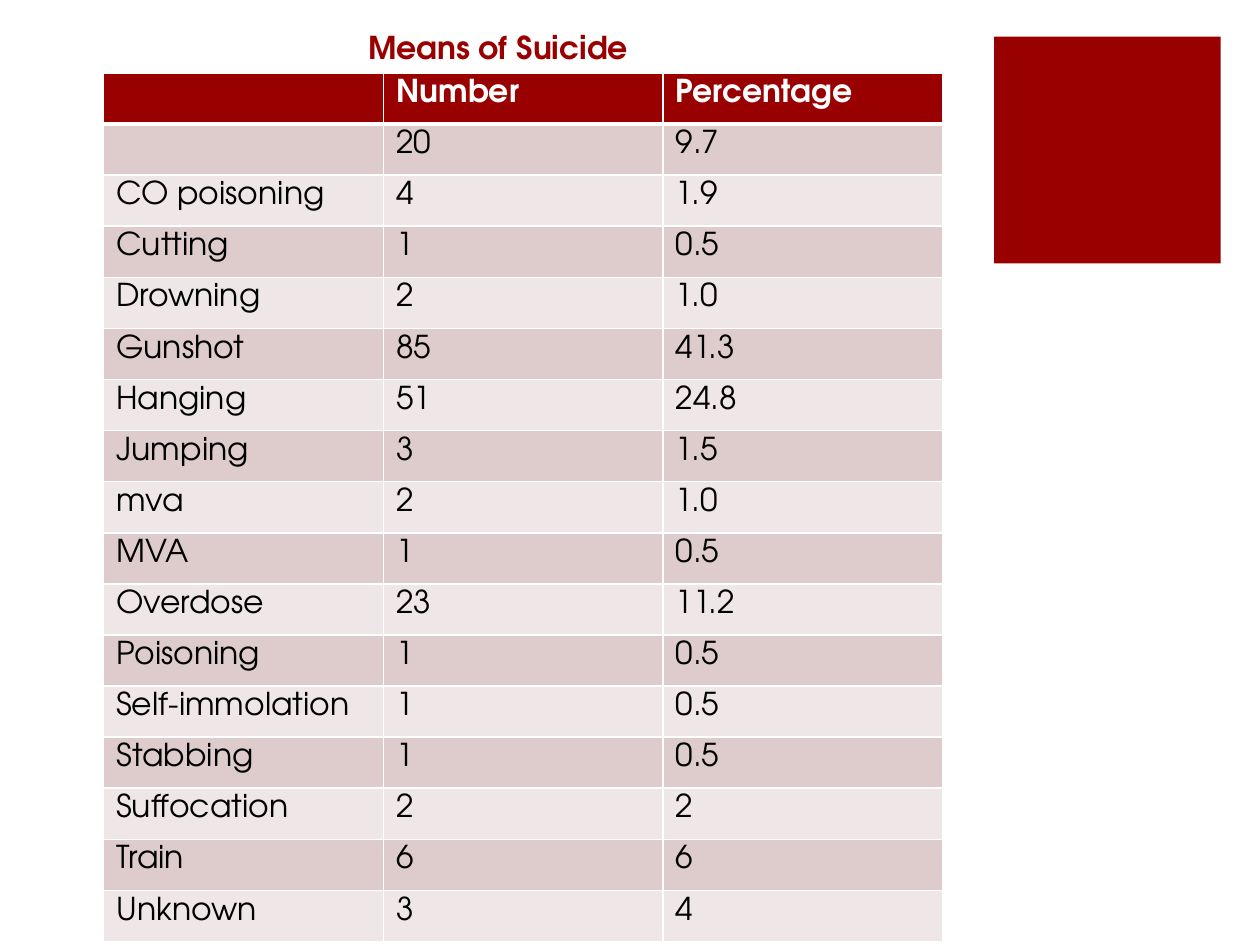
"""Build a slide with a table of the means of suicide by number and percentage."""
import pptx
import pptx.dml.color
import pptx.enum.shapes
import pptx.enum.text
import pptx.oxml
import pptx.oxml.ns
import pptx.util
from pptx.util import Cm

TITLE = "Means of Suicide"
HEADER = ("", "Number", "Percentage")
ROWS = [
    ("", "20", "9.7"),
    ("CO poisoning", "4", "1.9"),
    ("Cutting", "1", "0.5"),
    ("Drowning", "2", "1.0"),
    ("Gunshot", "85", "41.3"),
    ("Hanging", "51", "24.8"),
    ("Jumping", "3", "1.5"),
    ("mva", "2", "1.0"),
    ("MVA", "1", "0.5"),
    ("Overdose", "23", "11.2"),
    ("Poisoning", "1", "0.5"),
    ("Self-immolation", "1", "0.5"),
    ("Stabbing", "1", "0.5"),
    ("Suffocation", "2", "2"),
    ("Train", "6", "6"),
    ("Unknown", "3", "4"),
]

THEME = {
    "font": "TeX Gyre Adventor",
    "size": 18,
    "accent": "990000",
    "text": "000000",
    "light": "FFFFFF",
    "bands": ("DECCCC", "EFE7E7"),
    "border": 1,
    "header_border": 3,
}

LEFT, COLUMN_WIDTH, ROW_HEIGHT = Cm(2.09), Cm(5.64), Cm(1.03)
TABLE_TOP, TABLE_WIDTH = Cm(1.47), COLUMN_WIDTH * len(HEADER)


def color(value):
    return pptx.dml.color.RGBColor.from_string(value)


def set_attributes(target, values):
    for name, value in values.items():
        setattr(target, name, value)


def write_text(paragraph, text, text_color, bold):
    run = paragraph.add_run()
    run.text = text
    set_attributes(run.font, {
        "name": THEME["font"], "size": pptx.util.Pt(THEME["size"]), "bold": bold,
    })
    run.font.color.rgb = color(text_color)


def fill_solid(target, value):
    target.fill.solid()
    target.fill.fore_color.rgb = color(value)


def set_border(cell, side, points):
    properties = cell._tc.get_or_add_tcPr()
    properties.append(pptx.oxml.parse_xml(
        f'<a:ln{side} {pptx.oxml.ns.nsdecls("a")} w="{pptx.util.Pt(points)}">'
        f'<a:solidFill><a:srgbClr val="{THEME["light"]}"/></a:solidFill></a:ln{side}>'
    ))


def add_accent_square(slide):
    square = slide.shapes.add_shape(
        pptx.enum.shapes.MSO_SHAPE.RECTANGLE, Cm(20.04), Cm(0.74), Cm(4.57), Cm(4.57))
    square.shadow.inherit = False
    fill_solid(square, THEME["accent"])
    square.line.fill.background()


def add_title(slide):
    title = slide.shapes.title
    set_attributes(title, {
        "left": LEFT, "top": Cm(0.43), "width": TABLE_WIDTH, "height": Cm(1.02),
    })
    set_attributes(title.text_frame, {
        "margin_left": Cm(5.33),
        "margin_top": Cm(0.13),
        "margin_bottom": Cm(0.13),
        "vertical_anchor": pptx.enum.text.MSO_ANCHOR.TOP,
        "auto_size": pptx.enum.text.MSO_AUTO_SIZE.NONE,
        "word_wrap": True,
    })
    paragraph = title.text_frame.paragraphs[0]
    paragraph.alignment = pptx.enum.text.PP_ALIGN.LEFT
    write_text(paragraph, TITLE, THEME["accent"], True)


def add_table(slide):
    records = [HEADER] + ROWS
    table = slide.shapes.add_table(
        len(records), len(HEADER), LEFT, TABLE_TOP,
        TABLE_WIDTH, ROW_HEIGHT * len(records)).table
    for column in table.columns:
        column.width = COLUMN_WIDTH
    for row_index, record in enumerate(records):
        table.rows[row_index].height = ROW_HEIGHT
        is_header = row_index == 0
        background = THEME["accent"] if is_header else THEME["bands"][(row_index - 1) % 2]
        text_color = THEME["light"] if is_header else THEME["text"]
        widths = {side: THEME["border"] for side in "LRTB"}
        if is_header:
            widths["B"] = THEME["header_border"]
        elif row_index == 1:
            widths["T"] = THEME["header_border"]
        for column_index, text in enumerate(record):
            cell = table.cell(row_index, column_index)
            for side, points in widths.items():
                set_border(cell, side, points)
            fill_solid(cell, background)
            if text:
                write_text(cell.text_frame.paragraphs[0], text, text_color, is_header)


def main():
    presentation = pptx.Presentation()
    set_attributes(presentation, {"slide_width": Cm(25.4), "slide_height": Cm(19.05)})
    slide = presentation.slides.add_slide(presentation.slide_layouts.get_by_name("Title Only"))
    add_accent_square(slide)
    add_table(slide)
    add_title(slide)
    presentation.save("out.pptx")


if __name__ == "__main__":
    main()
